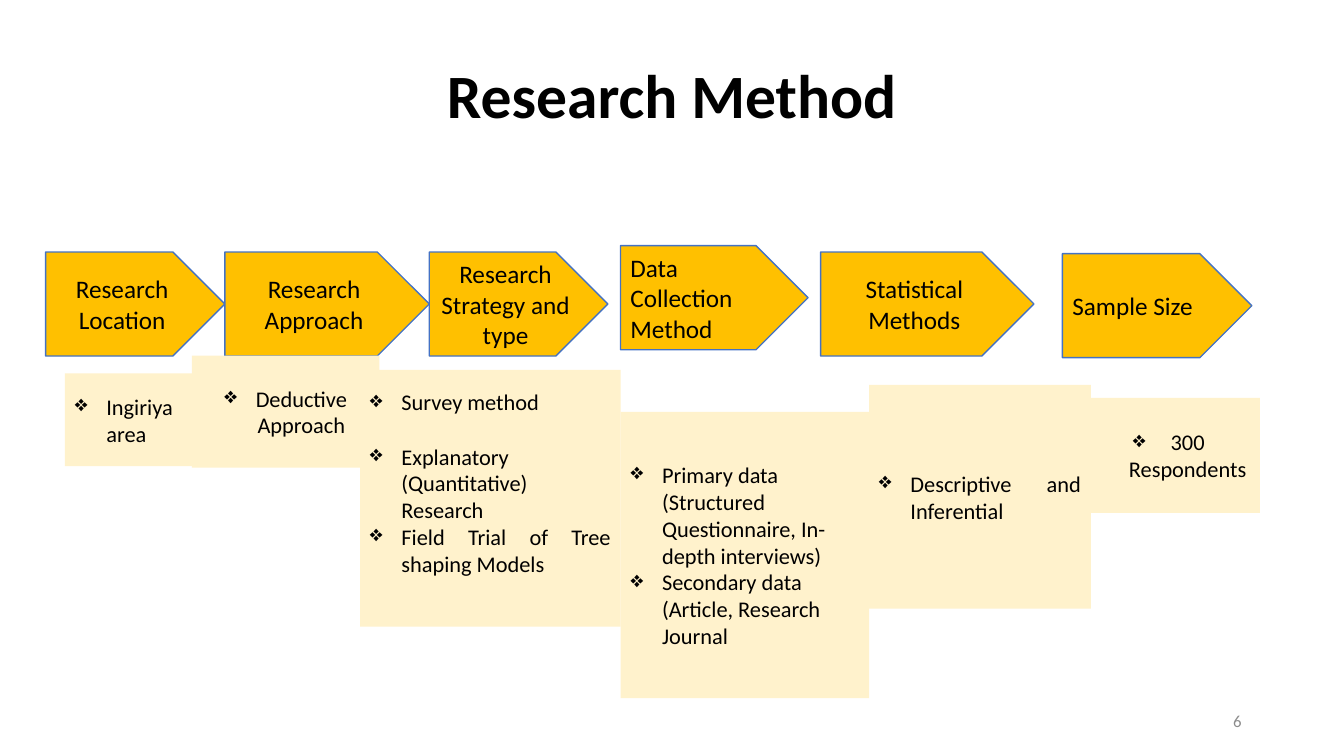
from lxml.etree import SubElement
from pptx import Presentation
from pptx.dml.color import RGBColor
from pptx.enum.shapes import MSO_SHAPE as Shape
from pptx.enum.text import MSO_ANCHOR as Anchor, PP_ALIGN as Align
from pptx.oxml.ns import qn
from pptx.util import Pt

COLORS = {"gold": "FFC000", "blue": "4472C4", "cream": "FFF2CC",
          "black": "000000", "gray": "8C8C8C"}
LEFT, MID, RIGHT, JUST = Align.LEFT, Align.CENTER, Align.RIGHT, Align.JUSTIFY
LINE = 19.5   # height of a 16 pt line
INSET = 3.6

# text, left, top, width, alignment
STEP_H = 74.3
STEPS = [
    ("Research Location", 32.6, 180, 128, MID),
    ("Research Approach", 160.6, 180, 146, MID),
    ("Research Strategy and type", 306.6, 180, 127.6, MID),
    ("Data Collection Method", 443.2, 175.5, 134, JUST),
    ("Statistical Methods", 586.2, 180, 152.4, MID),
    ("Sample Size", 758.9, 181.2, 135.3, JUST),
]

# bullets, (left, top, width, height), alignment, indent, space before each, space at foot
NOTES = [
    (["Ingiriya area"], (46.4, 266.7, 111.6, 66.2), JUST, 22.5, [0], 0),
    (["Deductive Approach"], (137, 254, 134, 80), MID, 22.5, [0], 0),
    (["Survey method", "Explanatory (Quantitative) Research",
      "Field Trial of Tree shaping Models"],
     (257.2, 264.2, 186.2, 183.4), JUST, 22.5, [0, LINE, 0], 22),
    (["Primary data (Structured Questionnaire, In-depth interviews)",
      "Secondary data (Article, Research Journal"],
     (443.3, 294.3, 177.6, 204.5), LEFT, 22.5, [0, 0], 0),
    (["300 Respondents"], (769.7, 284.2, 130.3, 82.2), MID, 27, [0], 0),
    (["Descriptive and Inferential"], (620.8, 275, 158.4, 159.8), JUST, 22.5, [0], 0),
]


def rgb(name):
    return RGBColor.from_string(COLORS[name])


def style(para, size, align, color="black", bold=False):
    para.alignment = align
    font = para.font
    font.name, font.size, font.bold = "Calibri", Pt(size), bold
    font.color.rgb = rgb(color)


def add_bullet(para, indent):
    """Give a paragraph a diamond bullet with a hanging indent."""
    props = para._p.get_or_add_pPr()
    props.set("marL", str(Pt(indent)))
    props.set("indent", str(-Pt(indent)))
    SubElement(props, qn("a:buChar")).set("char", "❖")


def set_frame(shape):
    frame = shape.text_frame
    frame.word_wrap = True
    frame.vertical_anchor = Anchor.MIDDLE
    return frame


def add_label(slide, text, box, size, align, **look):
    frame = set_frame(slide.shapes.add_textbox(*map(Pt, box)))
    para = frame.paragraphs[0]
    para.text = text
    style(para, size, align, **look)
    return para


def add_block(slide, kind, box, fill):
    """Add a filled shape without outline and return it with its text frame."""
    shape = slide.shapes.add_shape(kind, *map(Pt, box))
    shape.shadow.inherit = False
    shape.fill.solid()
    shape.fill.fore_color.rgb = rgb(fill)
    shape.line.fill.background()
    return shape, set_frame(shape)


def add_step(slide, text, left, top, width, align):
    shape, frame = add_block(slide, Shape.PENTAGON, (left, top, width, STEP_H), "gold")
    shape.line.color.rgb = rgb("blue")
    shape.line.width = Pt(1)
    para = frame.paragraphs[0]
    para.text = text
    style(para, 18, align)


def add_note(slide, items, box, align, indent, gaps, foot):
    _, frame = add_block(slide, Shape.RECTANGLE, box, "cream")
    frame.margin_bottom = Pt(INSET + foot)
    for i, (item, gap) in enumerate(zip(items, gaps)):
        para = frame.add_paragraph() if i else frame.paragraphs[0]
        para.text = item
        if gap:
            para.space_before = Pt(gap)
        add_bullet(para, indent)
        style(para, 16, align)


def main():
    deck = Presentation()
    deck.slide_width, deck.slide_height = Pt(960), Pt(540)
    slide = deck.slides.add_slide(deck.slide_layouts[6])
    title = add_label(slide, "Research Method", (66, 10.8, 828, 104.4), 44, MID, bold=True)
    title.line_spacing = 1.15
    add_label(slide, "6", (678, 500.5, 216, 28.8), 12, RIGHT, color="gray")
    for step in STEPS:
        add_step(slide, *step)
    for note in NOTES:
        add_note(slide, *note)
    deck.save("out.pptx")


if __name__ == "__main__":
    main()
